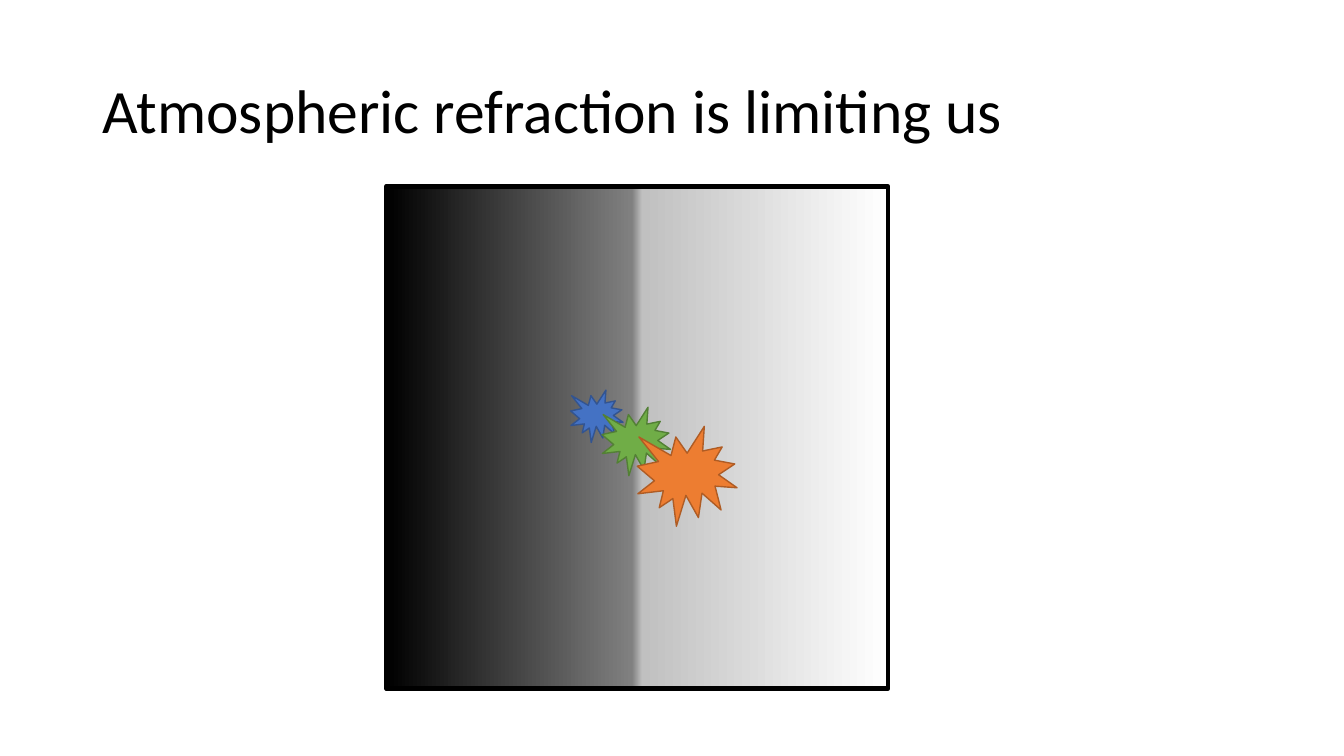
from copy import deepcopy

from pptx import Presentation
from pptx import util as u
from pptx.dml.color import RGBColor
from pptx.enum import shapes, text
from pptx.oxml.ns import qn

BLACK = RGBColor(0x00, 0x00, 0x00)
DARK_GREY = RGBColor(0x80, 0x80, 0x80)
LIGHT_GREY = RGBColor(0xC0, 0xC0, 0xC0)
WHITE = RGBColor(0xFF, 0xFF, 0xFF)
BLUE, BLUE_EDGE = RGBColor(0x44, 0x72, 0xC4), RGBColor(0x32, 0x54, 0x91)
GREEN, GREEN_EDGE = RGBColor(0x70, 0xAD, 0x47), RGBColor(0x53, 0x80, 0x35)
ORANGE, ORANGE_EDGE = RGBColor(0xED, 0x7D, 0x31), RGBColor(0xAF, 0x5C, 0x24)

# Content
HEADING = "Atmospheric refraction is limiting us"
HEADING_BOX = (0.92, 0.4, 11.5, 1.45)
SKY = (3.83, 1.85, 4.98)  # left, top, side
SKY_STOPS = [(0, BLACK), (0.49, DARK_GREY), (0.51, LIGHT_GREY), (1, WHITE)]
STAR_IMAGES = [  # left, top, side, fill, edge
    (5.66, 3.87, 0.52, BLUE, BLUE_EDGE),
    (5.97, 4.04, 0.68, GREEN, GREEN_EDGE),
    (6.32, 4.23, 0.99, ORANGE, ORANGE_EDGE),
]

deck = Presentation()
deck.slide_width, deck.slide_height = u.Inches(13.33), u.Inches(7.5)
slide = deck.slides.add_slide(deck.slide_layouts[6])


def add_text(words, box, size, color, font="Calibri", spacing=0.9):
    frame = slide.shapes.add_textbox(*map(u.Inches, box)).text_frame
    frame.word_wrap = True
    frame.vertical_anchor = text.MSO_ANCHOR.MIDDLE
    paragraph = frame.paragraphs[0]
    paragraph.line_spacing = spacing
    run = paragraph.add_run()
    run.text = words
    run.font.name, run.font.size = font, u.Pt(size)
    run.font.color.rgb = color


def add_square(group, preset, left, top, side, edge, edge_width):
    square = group.shapes.add_shape(preset, *map(u.Inches, (left, top, side, side)))
    square.shadow.inherit = False
    square.line.color.rgb = edge
    square.line.width = u.Pt(edge_width)
    return square


def fill_gradient(shape, stops, angle=0):
    shape.fill.gradient()
    shape.fill.gradient_angle = angle
    stop_list = next(shape._element.iter(qn("a:gsLst")))
    while len(stop_list) < len(stops):
        stop_list.append(deepcopy(stop_list[0]))
    for stop, (position, color) in zip(shape.fill.gradient_stops, stops):
        stop.position = position
        stop.color.rgb = color


# Heading
add_text(HEADING, HEADING_BOX, size=44, color=BLACK)

# Sky with the refracted star images
field = slide.shapes.add_group_shape()
sky = add_square(field, shapes.MSO_SHAPE.RECTANGLE, *SKY, BLACK, 3)
fill_gradient(sky, SKY_STOPS)
for left, top, side, fill, edge in STAR_IMAGES:
    star = add_square(field, shapes.MSO_SHAPE.EXPLOSION1, left, top, side, edge, 1)
    star.fill.solid()
    star.fill.fore_color.rgb = fill

deck.save("out.pptx")
